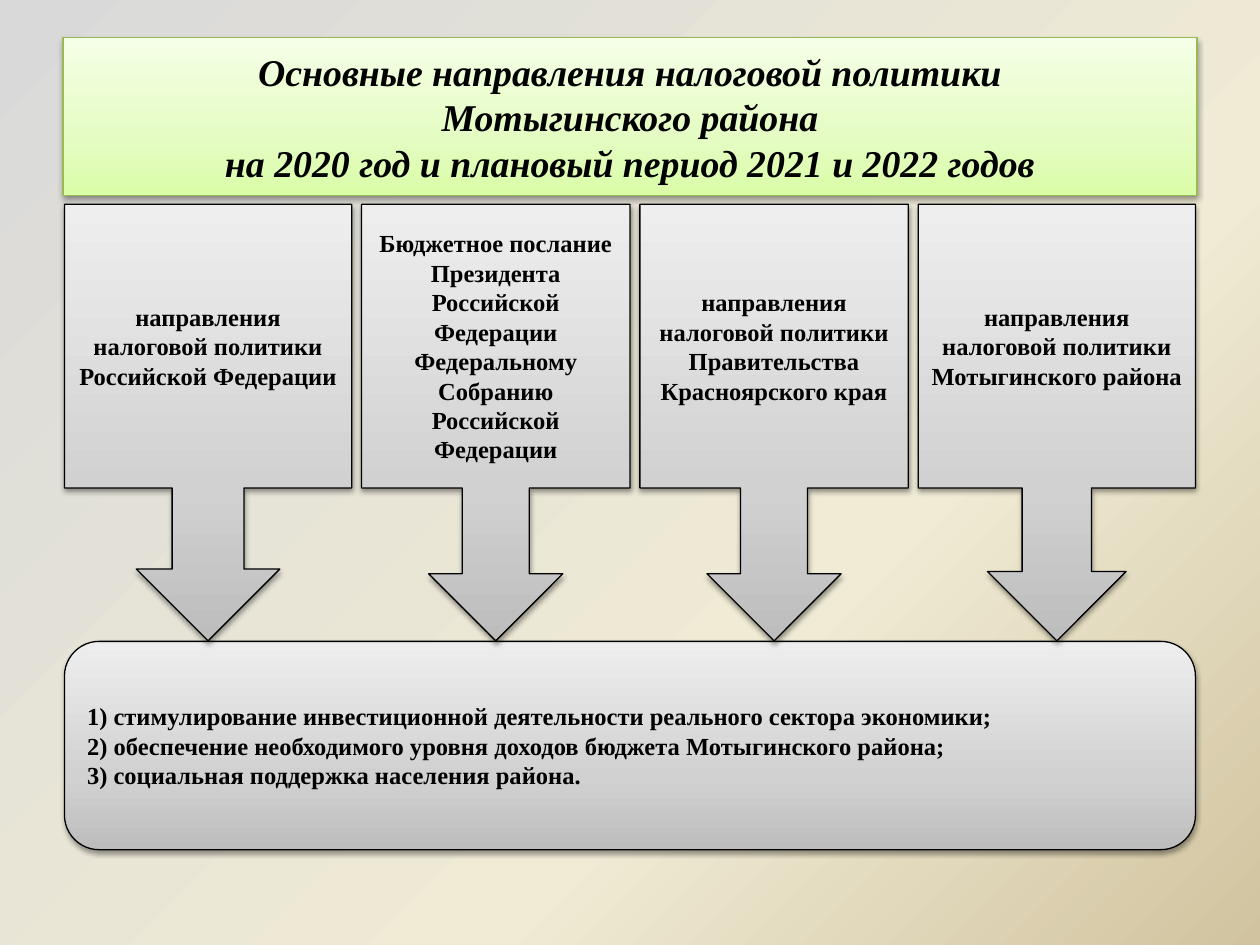
from copy import deepcopy

from lxml.etree import SubElement
from pptx import Presentation
from pptx.dml.color import RGBColor
from pptx.enum.shapes import MSO_SHAPE as Shapes
from pptx.enum.text import MSO_ANCHOR as Anchor, MSO_AUTO_SIZE as AutoSize, PP_ALIGN as Align
from pptx.oxml.ns import qn
from pptx.util import Cm, Pt

TITLE = [
    "Основные направления налоговой политики",
    "Мотыгинского района",
    "на 2020 год и плановый период 2021 и 2022 годов",
]
SOURCES = [
    (5.79, "направления налоговой политики Российской Федерации"),
    (5.41, "Бюджетное послание Президента Российской Федерации "
           "Федеральному Собранию Российской Федерации"),
    (5.41, "направления налоговой политики Правительства Красноярского края"),
    (5.59, "направления налоговой политики Мотыгинского района"),
]
GOALS = [
    "1) стимулирование инвестиционной деятельности реального сектора экономики;",
    "2) обеспечение необходимого уровня доходов бюджета Мотыгинского района;",
    "3) социальная поддержка населения района.",
]
COLORS = {"black": "000000", "green_line": "98B955"}
GRADIENTS = {
    "sand": [(0, "D9D9D9"), (0.65, "F0EBD5"), (1, "D1C39F")],
    "green": [(0, "DAFDA7"), (0.35, "E4FCC2"), (1, "F5FFE7")],
    "grey": [(0, "BDBDBD"), (0.35, "D1D1D1"), (1, "EEEEEE")],
}
FONT = "Times New Roman"
LEFT, GAP = 1.3, 0.2
CALLOUT_TOP, CALLOUT_HEIGHT = 4.12, 8.8
GOALS_TOP, GOALS_HEIGHT = 12.93, 4.2


def paint_gradient(fill, element, name, angle):
    fill.gradient()
    fill.gradient_angle = angle
    stop_list = element.find(".//" + qn("a:gsLst"))
    stop_list.append(deepcopy(stop_list[0]))
    for stop, (position, color) in zip(fill.gradient_stops, GRADIENTS[name]):
        stop.position = position
        stop.color.rgb = RGBColor.from_string(color)


def add_shadow(shape):
    shape.shadow.inherit = False
    effects = shape._element.spPr.find(qn("a:effectLst"))
    shadow = SubElement(effects, qn("a:outerShdw"), blurRad=str(Pt(3.1)),
                        dist=str(Pt(1.6)), dir="5400000", rotWithShape="0")
    color = SubElement(shadow, qn("a:srgbClr"), val=COLORS["black"])
    SubElement(color, qn("a:alpha"), val="38000")


def style_box(box, gradient, line):
    paint_gradient(box.fill, box._element.spPr, gradient, 90)
    box.line.color.rgb = RGBColor.from_string(COLORS[line])
    box.line.width = Pt(0.75)
    add_shadow(box)


def write_lines(box, lines, size, align, italic=False):
    frame = box.text_frame
    frame.word_wrap = True
    frame.auto_size = AutoSize.NONE
    frame.vertical_anchor = Anchor.MIDDLE
    para = frame.paragraphs[0]
    para.alignment = align
    for number, line in enumerate(lines):
        if number:
            para.add_line_break()
        span = para.add_run()
        span.text = line
        span.font.name = FONT
        span.font.size = Pt(size)
        span.font.bold = True
        span.font.italic = italic
        span.font.color.rgb = RGBColor.from_string(COLORS["black"])


def add_box(page, kind, left, top, width, height, lines, align):
    box = page.shapes.add_shape(kind, Cm(left), Cm(top), Cm(width), Cm(height))
    style_box(box, "grey", "black")
    write_lines(box, lines, 14, align)


def main():
    deck = Presentation()
    deck.slide_width, deck.slide_height = Cm(25.4), Cm(19.05)
    page = deck.slides.add_slide(deck.slide_layouts[5])
    paint_gradient(page.background.fill, page._element, "sand", 315)

    title = page.shapes.title
    title.left, title.top, title.width, title.height = Cm(1.27), Cm(0.76), Cm(22.86), Cm(3.18)
    style_box(title, "green", "green_line")
    write_lines(title, TITLE, 21.6, Align.CENTER, italic=True)

    total_width = sum(width for width, text in SOURCES) + GAP * (len(SOURCES) - 1)
    add_box(page, Shapes.ROUNDED_RECTANGLE, LEFT, GOALS_TOP, total_width, GOALS_HEIGHT,
            GOALS, Align.LEFT)

    left = LEFT
    for width, text in SOURCES:
        add_box(page, Shapes.DOWN_ARROW_CALLOUT, left, CALLOUT_TOP, width, CALLOUT_HEIGHT,
                [text], Align.CENTER)
        left += width + GAP

    deck.save("out.pptx")


if __name__ == "__main__":
    main()
